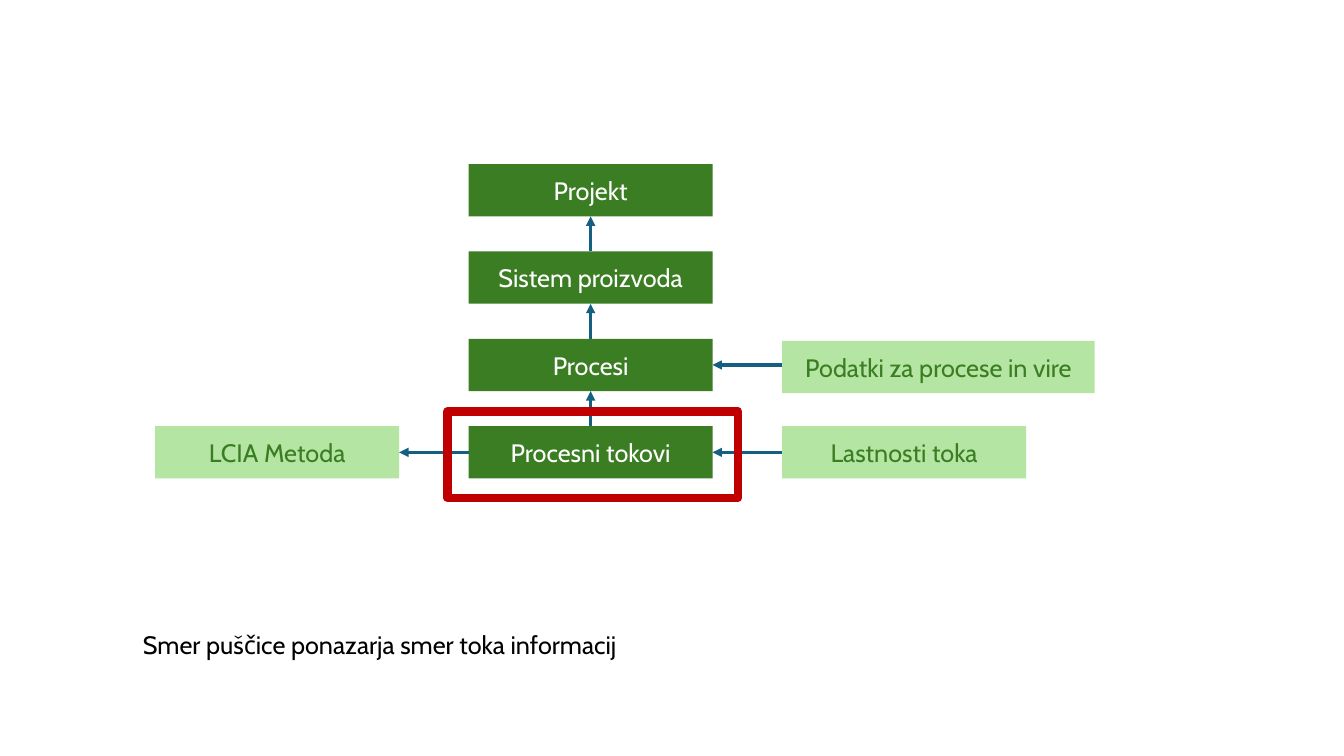
from dataclasses import dataclass

import pptx
import pptx.dml.color
import pptx.enum.shapes
import pptx.enum.text
import pptx.oxml.ns
import pptx.util
from lxml import etree

Pt = pptx.util.Pt
DARK_GREEN, LIGHT_GREEN = "3B7D23", "B4E5A2"
ARROW_BLUE, HIGHLIGHT_RED = "156082", "C00000"
WHITE, BLACK = "FFFFFF", "000000"

# Grid of the diagram, in points
COLUMNS = [110.9, 334.8, 558.7]
TOP, ROW_PITCH = 117.2, 62.4
BOX_WIDTH, BOX_HEIGHT = 174.2, 37.4


@dataclass
class Box:
    text: str
    column: int
    row: int
    fill: str = LIGHT_GREEN
    color: str = DARK_GREEN
    width: float = BOX_WIDTH
    shift: float = 0

    @property
    def left(self) -> float:
        return COLUMNS[self.column]

    @property
    def right(self) -> float:
        return self.left + self.width

    @property
    def top(self) -> float:
        return TOP + self.row * ROW_PITCH + self.shift

    @property
    def center(self) -> float:
        return self.left + self.width / 2


def rgb(value: str) -> pptx.dml.color.RGBColor:
    return pptx.dml.color.RGBColor.from_string(value)


def write(frame, text: str, *, color: str, size: float = 18, font: str = "Cabin",
          align=pptx.enum.text.PP_ALIGN.LEFT,
          anchor=pptx.enum.text.MSO_ANCHOR.TOP) -> None:
    frame.word_wrap = True
    frame.vertical_anchor = anchor
    paragraph = frame.paragraphs[0]
    paragraph.alignment = align
    run = paragraph.add_run()
    run.text = text
    run.font.size = Pt(size)
    run.font.name = font
    run.font.color.rgb = rgb(color)


def add_rectangle(slide, left: float, top: float, width: float, height: float):
    rectangle = slide.shapes.add_shape(
        pptx.enum.shapes.MSO_SHAPE.RECTANGLE, Pt(left), Pt(top), Pt(width), Pt(height))
    rectangle.shadow.inherit = False
    return rectangle


def draw_box(slide, box: Box) -> None:
    rectangle = add_rectangle(slide, box.left, box.top, box.width, BOX_HEIGHT)
    rectangle.fill.solid()
    rectangle.fill.fore_color.rgb = rgb(box.fill)
    rectangle.line.fill.background()
    write(rectangle.text_frame, box.text, color=box.color,
          align=pptx.enum.text.PP_ALIGN.CENTER,
          anchor=pptx.enum.text.MSO_ANCHOR.MIDDLE)


def draw_arrow(slide, x1: float, y1: float, x2: float, y2: float) -> None:
    arrow = slide.shapes.add_connector(
        pptx.enum.shapes.MSO_CONNECTOR.STRAIGHT, Pt(x1), Pt(y1), Pt(x2), Pt(y2))
    arrow.line.color.rgb = rgb(ARROW_BLUE)
    arrow.line.width = Pt(2.25)
    qn = pptx.oxml.ns.qn
    etree.SubElement(arrow.line._get_or_add_ln(), qn("a:tailEnd"), type="triangle")
    etree.SubElement(arrow._element.spPr, qn("a:effectLst"))


def main() -> None:
    presentation = pptx.Presentation()
    presentation.slide_width, presentation.slide_height = Pt(960), Pt(540)
    slide = presentation.slides.add_slide(presentation.slide_layouts[6])

    # Main chain and its side inputs and outputs
    levels = ["Projekt", "Sistem proizvoda", "Procesi", "Procesni tokovi"]
    chain = [Box(text, 1, row, DARK_GREEN, WHITE) for row, text in enumerate(levels)]
    processes, flows = chain[2:]
    method = Box("LCIA Metoda", 0, 3)
    properties = Box("Lastnosti toka", 2, 3)
    process_data = Box("Podatki za procese in vire", 2, 2, width=223.2, shift=1.4)
    for box in [*chain, method, properties, process_data]:
        draw_box(slide, box)

    # Upward arrows along the chain
    for upper, lower in zip(chain, chain[1:]):
        draw_arrow(slide, lower.center, lower.top, upper.center, upper.top + BOX_HEIGHT)

    # Leftward arrows, level with the chain
    for source, target, level in [(flows, method, flows), (properties, flows, flows),
                                  (process_data, processes, processes)]:
        y = level.top + BOX_HEIGHT / 2
        draw_arrow(slide, source.left, y, target.right, y)

    # Caption
    caption = slide.shapes.add_textbox(Pt(95), Pt(445.7), Pt(414), Pt(29))
    write(caption.text_frame, "Smer puščice ponazarja smer toka informacij", color=BLACK)

    # Highlight around the process flows
    highlight = add_rectangle(slide, 319.7, 293.8, 207.4, 61.9)
    highlight.fill.background()
    highlight.line.color.rgb = rgb(HIGHLIGHT_RED)
    highlight.line.width = Pt(6)

    presentation.save("out.pptx")


if __name__ == "__main__":
    main()
